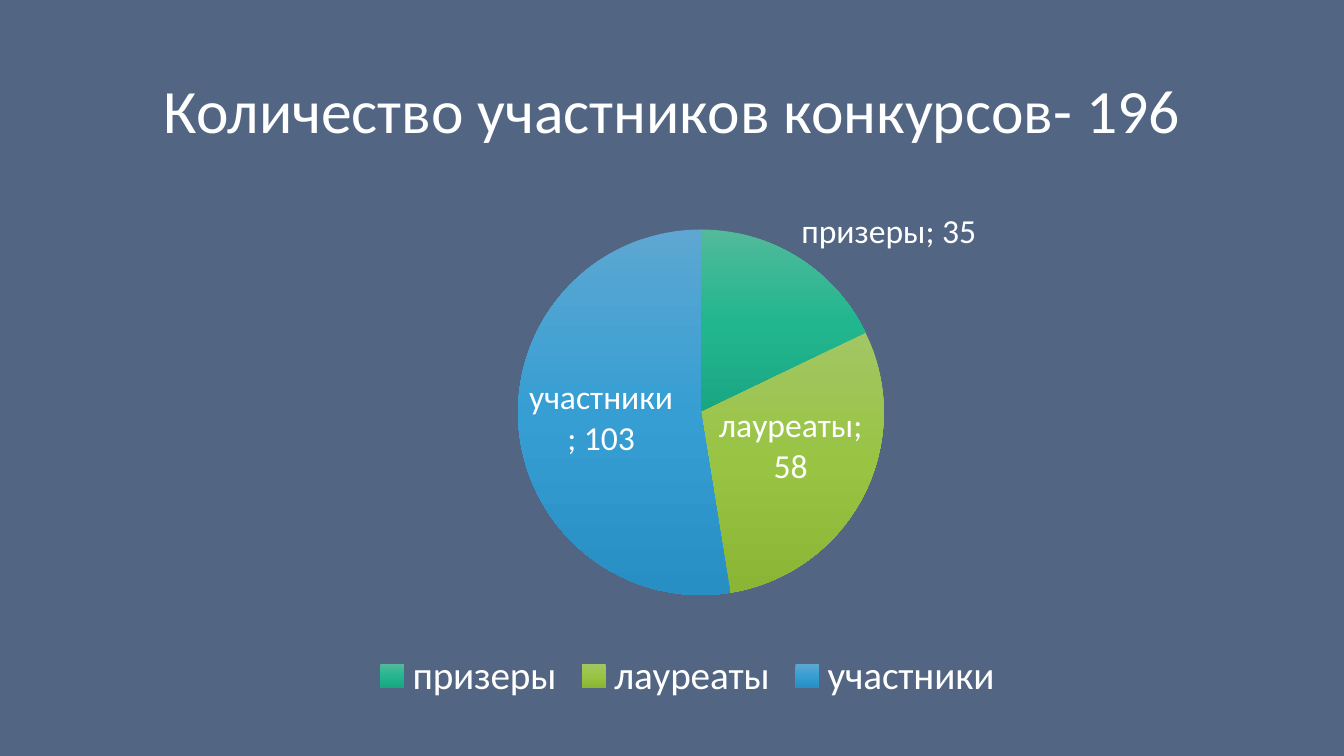
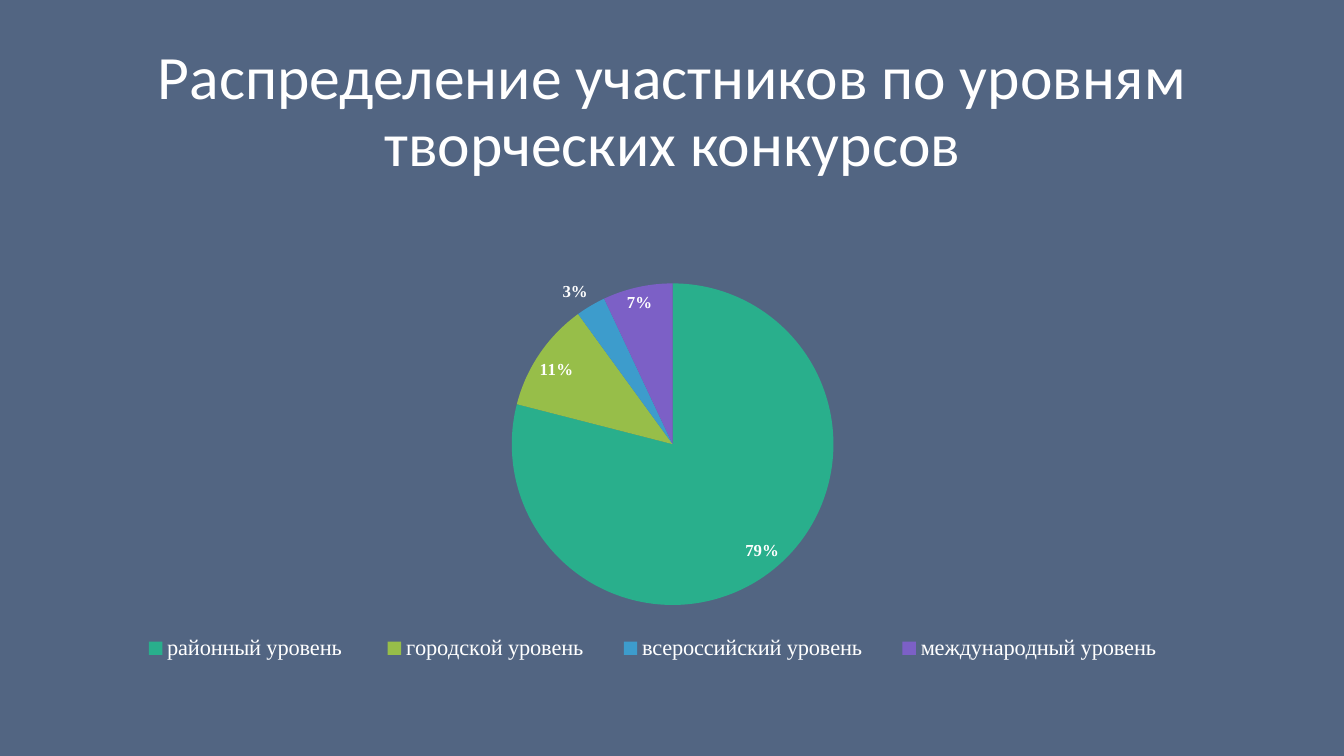
import copy

import pptx
import pptx.chart.data
import pptx.dml.color
import pptx.enum.chart
import pptx.enum.text
import pptx.oxml
import pptx.oxml.ns
import pptx.util

RGBColor = pptx.dml.color.RGBColor
BACKGROUND = RGBColor(0x52, 0x65, 0x82)
WHITE = RGBColor(0xFF, 0xFF, 0xFF)
GREEN = RGBColor(0x29, 0xAF, 0x8C)
LIME = RGBColor(0x97, 0xBE, 0x49)
BLUE = RGBColor(0x3D, 0x9C, 0xCC)
VIOLET = RGBColor(0x7C, 0x60, 0xC6)
GREEN_SHADES = (RGBColor(0x52, 0xBA, 0x9A), RGBColor(0x22, 0xB6, 0x8F), RGBColor(0x19, 0xA7, 0x82))
LIME_SHADES = (RGBColor(0xA2, 0xC6, 0x64), RGBColor(0x99, 0xC4, 0x43), RGBColor(0x8A, 0xB5, 0x35))
BLUE_SHADES = (RGBColor(0x5D, 0xA7, 0xD2), RGBColor(0x36, 0x9E, 0xD3), RGBColor(0x28, 0x8F, 0xC4))

BODY_FONT = "Calibri"
SERIF_FONT = "Times New Roman"
WIDTH, HEIGHT = 13.33, 7.5
TITLE_BOX = (0.069, 0.053, 0.863, 0.193)


def set_values(target, values):
    for name, value in values.items():
        setattr(target, name, value)


def set_font(font, size, name=BODY_FONT, bold=False):
    set_values(font, {"size": pptx.util.Pt(size), "name": name, "bold": bold})
    font.color.rgb = WHITE


def set_layout(parent, index, box, inner=False):
    """Place a chart part at shares (left, top, width, height) of the chart."""
    for old_layout in parent.findall(pptx.oxml.ns.qn("c:layout")):
        parent.remove(old_layout)
    parts = [("layoutTarget", "inner")] if inner else []
    parts += [("xMode", "edge"), ("yMode", "edge")]
    parts += zip("xywh", box)
    body = "".join(f'<c:{tag} val="{value}"/>' for tag, value in parts)
    parent.insert(index, pptx.oxml.parse_xml(
        f'<c:layout {pptx.oxml.ns.nsdecls("c")}><c:manualLayout>{body}</c:manualLayout></c:layout>'))


class Deck:
    """Shared style and the slide being filled; boxes are shares of the slide."""

    def __init__(self):
        self.presentation = pptx.Presentation()
        set_values(self.presentation, {"slide_width": pptx.util.Inches(WIDTH),
                                       "slide_height": pptx.util.Inches(HEIGHT)})
        self.slide = None

    def place(self, box):
        return [pptx.util.Inches(share * length)
                for share, length in zip(box, (WIDTH, HEIGHT) * 2)]

    def add_slide(self, title):
        self.slide = self.presentation.slides.add_slide(self.presentation.slide_layouts[6])
        fill = self.slide.background.fill
        fill.solid()
        fill.fore_color.rgb = BACKGROUND
        self.add_title(title)

    def add_title(self, text):
        frame = self.slide.shapes.add_textbox(*self.place(TITLE_BOX)).text_frame
        set_values(frame, {"word_wrap": True,
                           "vertical_anchor": pptx.enum.text.MSO_ANCHOR.MIDDLE})
        paragraph = frame.paragraphs[0]
        set_values(paragraph, {"alignment": pptx.enum.text.PP_ALIGN.CENTER, "line_spacing": 0.9})
        run = paragraph.add_run()
        run.text = text
        set_font(run.font, 44)

    def add_pie(self, box, slices, plot_box, label_font, label_content, legend_font, legend_box=None):
        """Draw slices given as (category, value, colour or gradient shades)."""
        data = pptx.chart.data.CategoryChartData()
        data.categories = [category for category, _, _ in slices]
        data.add_series("Series 1", [value for _, value, _ in slices])
        chart = self.slide.shapes.add_chart(
            pptx.enum.chart.XL_CHART_TYPE.PIE, *self.place(box), data).chart
        set_values(chart, {"has_title": False, "has_legend": True})
        set_font(chart.font, 10)
        plot = chart.plots[0]
        set_values(plot, {"vary_by_categories": True, "has_data_labels": True})
        for index, (_, _, paint) in enumerate(slices):
            self.paint_slice(plot.series[0].points[index].format.fill, paint, chart, index)
        labels = plot.data_labels
        set_values(labels, {"show_value": False, "position":
                            pptx.enum.chart.XL_LABEL_POSITION.BEST_FIT, **label_content})
        set_font(labels.font, **label_font)
        legend = chart.legend
        set_values(legend, {"position": pptx.enum.chart.XL_LEGEND_POSITION.BOTTOM,
                            "include_in_layout": False})
        set_font(legend.font, **legend_font)
        set_layout(chart.element.find(".//" + pptx.oxml.ns.qn("c:plotArea")), 0, plot_box, True)
        if legend_box:
            set_layout(chart.element.find(".//" + pptx.oxml.ns.qn("c:legend")), 1, legend_box)

    def paint_slice(self, fill, paint, chart, index):
        if isinstance(paint, RGBColor):
            fill.solid()
            fill.fore_color.rgb = paint
            return
        fill.gradient()
        fill.gradient_angle = 270
        stop_list = chart.element.xpath(".//c:dPt//a:gsLst")[index]
        stop_list.append(copy.deepcopy(stop_list[0]))
        for number, (stop, shade) in enumerate(zip(fill.gradient_stops, paint)):
            stop.position = number / (len(paint) - 1)
            stop.color.rgb = shade


def main():
    deck = Deck()

    deck.add_slide("Количество участников конкурсов- 196")
    deck.add_pie(
        (0.177, 0.192, 0.669, 0.744),
        [("призеры", 35, GREEN_SHADES),
         ("лауреаты", 58, LIME_SHADES),
         ("участники", 103, BLUE_SHADES)],
        plot_box=(0.31, 0.15, 0.41, 0.65),
        label_font={"size": 24},
        label_content={"show_value": True, "show_category_name": True},
        legend_font={"size": 28})

    deck.add_slide("Распределение участников по уровням творческих конкурсов")
    deck.add_pie(
        (0.069, 0.267, 0.863, 0.635),
        [("районный уровень ", 79, GREEN),
         ("городской уровень", 11, LIME),
         ("всероссийский уровень", 3, BLUE),
         ("международный уровень ", 7, VIOLET)],
        plot_box=(0, 0.17, 1, 0.67),
        label_font={"size": 12, "name": SERIF_FONT, "bold": True},
        label_content={"show_percentage": True, "number_format": "0%",
                       "number_format_is_linked": False},
        legend_font={"size": 16, "name": SERIF_FONT},
        legend_box=(0.02, 0.88, 0.93, 0.1))

    deck.presentation.save("out.pptx")


if __name__ == "__main__":
    main()
